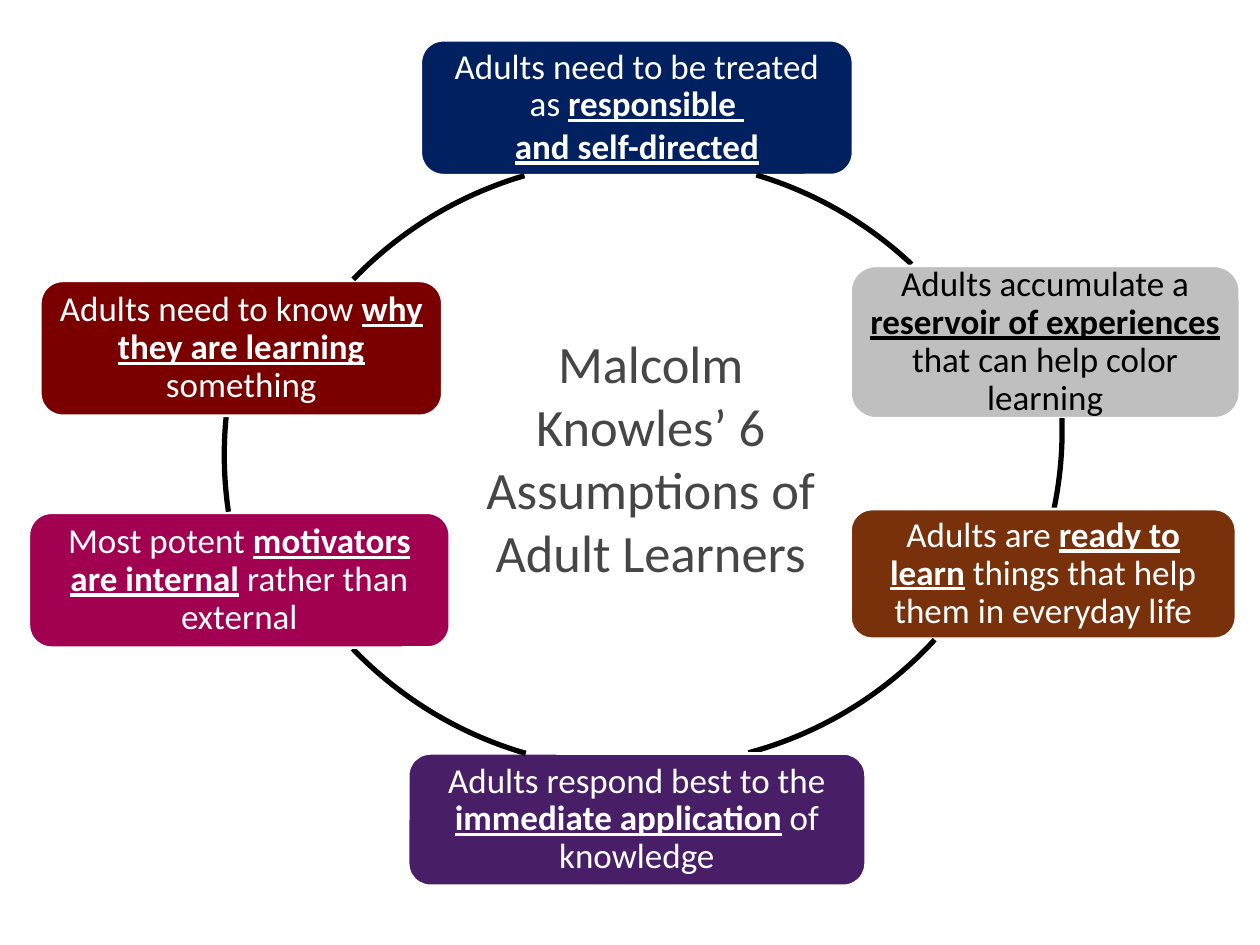
"""Build a ring of six rounded boxes on the assumptions about adult learners."""
from dataclasses import dataclass

from pptx import Presentation
from pptx.dml.color import RGBColor
from pptx.enum.shapes import MSO_SHAPE
from pptx.enum.text import MSO_ANCHOR, PP_ALIGN
from pptx.slide import Slide
from pptx.text.text import TextFrame, _Paragraph
from pptx.util import Emu, Pt

EMU_PER_PX = 9144
RING_SIZE = 618
BOX_INSET = 8
ARC_UNITS_PER_DEGREE = 0.6


@dataclass(frozen=True)
class Theme:
    font: str = "Calibri"
    title_size: int = 30
    body_size: int = 20
    space_after: int = 7
    box_line: float = 1.5
    arc_line: float = 3
    title: str = "464646"
    white: str = "FFFFFF"
    black: str = "000000"
    navy: str = "002060"
    grey: str = "BFBFBF"
    brown: str = "78310B"
    purple: str = "481F67"
    magenta: str = "A20051"
    maroon: str = "7A0000"


@dataclass(frozen=True)
class Assumption:
    x: int
    y: int
    w: int
    h: int
    fill: str
    lead: str
    key: str
    rest: str = ""
    closing_key: str = ""
    color: str = "FFFFFF"


@dataclass(frozen=True)
class Arc:
    x: int
    y: int
    start: float
    end: float


THEME = Theme()

STEPS = [
    (Assumption(334, 32, 343, 107, THEME.navy, "Adults need to be treated as ",
                "responsible ", closing_key="and self-directed"),
     Arc(203, 126, 286.6, 313.2)),
    (Assumption(675, 211, 309, 121, THEME.grey, "Adults accumulate a ",
                "reservoir of experiences", " that can help color learning",
                color=THEME.black),
     Arc(225, 32, 358.3, 11.7)),
    (Assumption(675, 404, 306, 103, THEME.brown, "Adults are ",
                "ready to learn", " things that help them in everyday life"),
     Arc(205, -10, 42.5, 75)),
    (Assumption(324, 598, 363, 105, THEME.purple, "Adults respond best to the ",
                "immediate application", " of knowledge"),
     Arc(194, -8, 106.1, 136.2)),
    (Assumption(23, 407, 334, 107, THEME.magenta, "Most potent ",
                "motivators are internal", " rather than external"),
     Arc(178, 52, 171.6, 185.7)),
    (Assumption(32, 223, 319, 107, THEME.maroon, "Adults need to know ",
                "why they are learning", " something"),
     Arc(194, 127, 223.9, 253.7)),
]


def px(n: int) -> Emu:
    """Turn pixels into EMU."""
    return Emu(n * EMU_PER_PX)


def rgb(color: str) -> RGBColor:
    """Turn a hex string into a colour."""
    return RGBColor.from_string(color)


def style_paragraph(p: _Paragraph, size: int, color: str) -> None:
    """Centre a paragraph and set its font."""
    p.alignment = PP_ALIGN.CENTER
    p.font.name = THEME.font
    p.font.size = Pt(size)
    p.font.color.rgb = rgb(color)


def add_run(p: _Paragraph, text: str, is_key: bool = False) -> None:
    """Add a run, bold and underlined when it is a key phrase."""
    r = p.add_run()
    r.text = text
    if is_key:
        r.font.bold = True
        r.font.underline = True


def write_assumption(tf: TextFrame, item: Assumption) -> None:
    """Write the wording of one assumption."""
    p = tf.paragraphs[0]
    p.line_spacing = 0.9
    style_paragraph(p, THEME.body_size, item.color)
    add_run(p, item.lead)
    add_run(p, item.key, is_key=True)
    if item.rest:
        add_run(p, item.rest)
    if item.closing_key:
        p = tf.add_paragraph()
        style_paragraph(p, THEME.body_size, item.color)
        add_run(p, item.closing_key, is_key=True)
    p.space_after = Pt(THEME.space_after)


def add_box(s: Slide, item: Assumption) -> None:
    """Draw the rounded box of one assumption."""
    sp = s.shapes.add_shape(MSO_SHAPE.ROUNDED_RECTANGLE,
                            px(item.x), px(item.y), px(item.w), px(item.h))
    sp.shadow.inherit = False
    sp.fill.solid()
    sp.fill.fore_color.rgb = rgb(item.fill)
    sp.line.color.rgb = rgb(THEME.white)
    sp.line.width = Pt(THEME.box_line)
    tf = sp.text_frame
    tf.word_wrap = True
    tf.vertical_anchor = MSO_ANCHOR.MIDDLE
    tf.margin_left = tf.margin_right = px(BOX_INSET)
    tf.margin_top = tf.margin_bottom = px(BOX_INSET)
    write_assumption(tf, item)


def add_arc(s: Slide, arc: Arc) -> None:
    """Draw the part of the ring that leads to the next box."""
    sp = s.shapes.add_shape(MSO_SHAPE.ARC, px(arc.x), px(arc.y),
                            px(RING_SIZE), px(RING_SIZE))
    sp.shadow.inherit = False
    sp.adjustments[0] = arc.start * ARC_UNITS_PER_DEGREE
    sp.adjustments[1] = arc.end * ARC_UNITS_PER_DEGREE
    sp.fill.background()
    sp.line.color.rgb = rgb(THEME.black)
    sp.line.width = Pt(THEME.arc_line)


def add_title(s: Slide, text: str) -> None:
    """Write the title in the middle of the ring."""
    tf = s.shapes.add_textbox(px(358), px(292), px(317), px(142)).text_frame
    tf.word_wrap = True
    tf.vertical_anchor = MSO_ANCHOR.MIDDLE
    p = tf.paragraphs[0]
    style_paragraph(p, THEME.title_size, THEME.title)
    add_run(p, text)


def main() -> None:
    """Build the slide and save it."""
    prs = Presentation()
    prs.slide_width, prs.slide_height = px(1000), px(750)
    s = prs.slides.add_slide(prs.slide_layouts[6])
    for item, arc in STEPS:
        add_box(s, item)
        add_arc(s, arc)
    add_title(s, "Malcolm Knowles’ 6 Assumptions of Adult Learners")
    prs.save("out.pptx")


if __name__ == "__main__":
    main()
